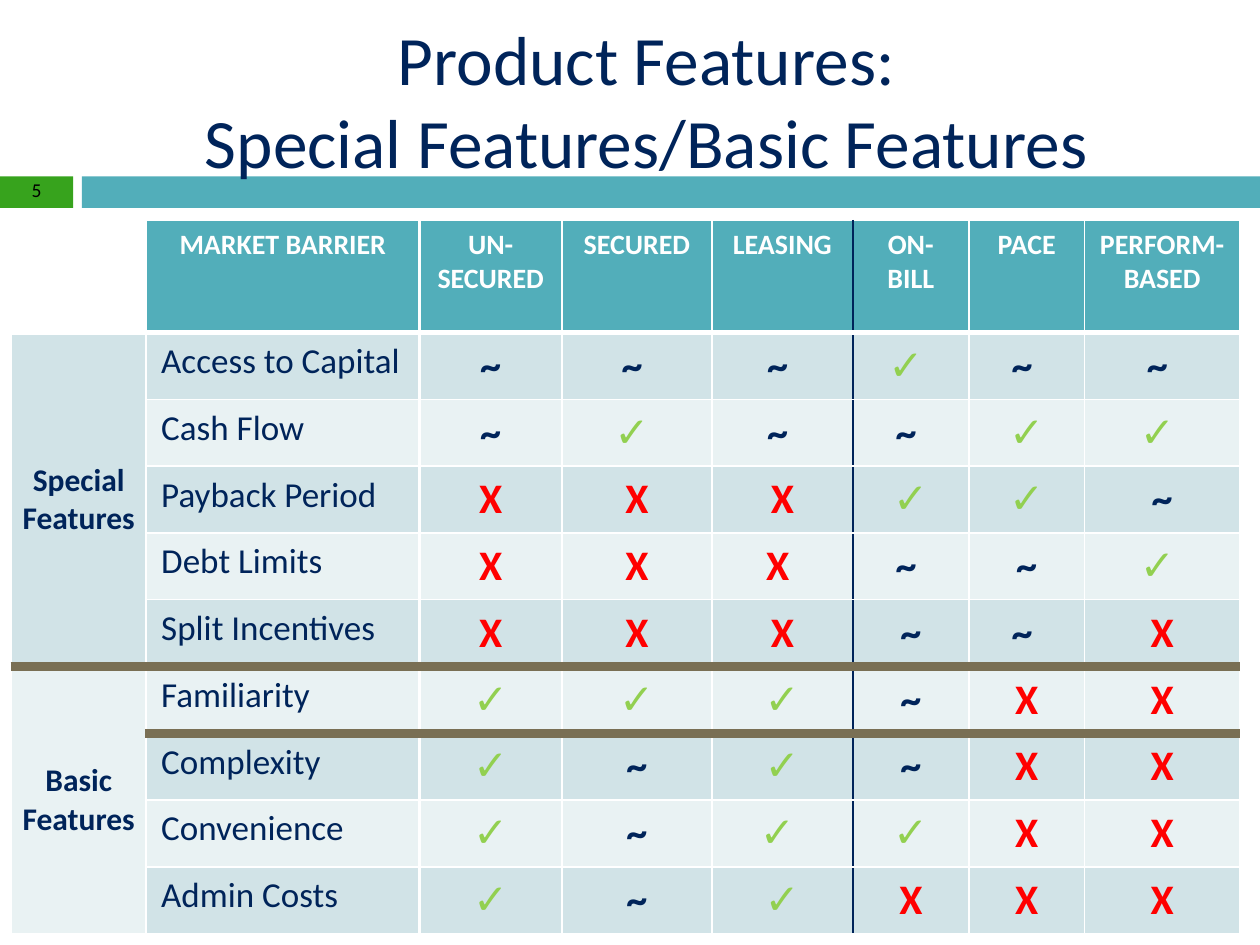
from lxml import etree
from pptx import Presentation
from pptx.dml.color import RGBColor
from pptx.enum import shapes, text
from pptx.oxml import ns
from pptx.util import Inches, Pt

NAVY, TEAL, GREEN, BROWN = "00245A", "52AEBA", "37A31D", "796F54"
WHITE, DARK, LIGHT = "FFFFFF", "D1E3E7", "E9F2F3"
INK = {"~": NAVY, "✓": "92D050", "X": "FF0000"}

TITLE = ["Product Features:", "Special Features/Basic Features"]
BARS = [(0, 0.58, GREEN), (0.65, 9.35, TEAL)]
HEAD = ["MARKET BARRIER", "UN-SECURED", "SECURED", "LEASING",
        "ON-BILL", "PACE", "PERFORM-BASED"]
# A space after a mark nudges it left of centre.
ROWS = [
    ("Access to Capital", ["~", "~ ", "~ ", "✓ ", "~ ", "~ "]),
    ("Cash Flow", ["~", "✓ ", "~ ", "~ ", "✓", "✓ "]),
    ("Payback Period", ["X", "X", "X", "✓", "✓", "~"]),
    ("Debt Limits", ["X", "X", "X ", "~ ", "~", "✓ "]),
    ("Split Incentives", ["X", "X", "X", "~", "~ ", "X"]),
    ("Familiarity", ["✓", "✓", "✓", "~", "X", "X"]),
    ("Complexity", ["✓", "~", "✓", "~", "X", "X"]),
    ("Convenience", ["✓", "~", "✓ ", "✓", "X", "X"]),
    ("Admin Costs", ["✓", "~", "✓", "X", "X", "X"]),
]
GROUPS = [("Special Features", 1, 5), ("Basic Features", 6, 9)]
COLS = [1.07, 2.17, 1.13, 1.19, 1.12, 0.92, 0.92, 1.23]
HEAD_H, ROW_H = 0.89, 0.53
CENTER, LEFT = text.PP_ALIGN.CENTER, text.PP_ALIGN.LEFT
MIDDLE, TOP = text.MSO_ANCHOR.MIDDLE, text.MSO_ANCHOR.TOP


def rgb(code):
    return RGBColor.from_string(code)


def paint(item, code):
    item.fill.solid()
    item.fill.fore_color.rgb = rgb(code)


def write(para, words, size, code, bold=False, align=CENTER):
    para.alignment = align
    run = para.add_run()
    run.text = words
    font = run.font
    font.name, font.size, font.bold = "Calibri", Pt(size), bold
    font.color.rgb = rgb(code)


def place(shape, left, top, width, height):
    shape.left, shape.top = Inches(left), Inches(top)
    shape.width, shape.height = Inches(width), Inches(height)


def across(line, col):
    """Colour and width of the horizontal rule above row number `line`."""
    if line == 6 or (line == 7 and col > 0):
        return BROWN, 6
    return WHITE, 3 if line == 1 else 1


def down(line):
    """Colour and width of the vertical rule left of column number `line`."""
    return {2: (WHITE, 2.25), 5: (NAVY, 1)}.get(line, (WHITE, 1))


def edge(cell, row, col, last):
    """Set the four borders of a cell that reaches down to row `last`."""
    props = cell._tc.get_or_add_tcPr()
    sides = {"lnL": down(col), "lnR": down(col + 1),
             "lnT": across(row, col), "lnB": across(last + 1, col)}
    for tag, (code, width) in sides.items():
        line = etree.SubElement(props, ns.qn("a:" + tag), w=str(Pt(width)))
        fill = etree.SubElement(line, ns.qn("a:solidFill"))
        etree.SubElement(fill, ns.qn("a:srgbClr"), val=code)


def dress(cell, row, col, last, fill):
    edge(cell, row, col, last)
    paint(cell, fill)
    cell.margin_left = cell.margin_right = Inches(0.12 if col else 0.05)
    cell.margin_top = cell.margin_bottom = Inches(0.06)
    cell.vertical_anchor = MIDDLE if row and col != 1 else TOP


def add_grid(slide):
    high = HEAD_H + ROW_H * len(ROWS)
    table = slide.shapes.add_table(
        len(ROWS) + 1, len(COLS), Inches(0.09), Inches(1.75),
        Inches(sum(COLS)), Inches(high)).table
    table.first_row = table.horz_banding = False
    for column, width in zip(table.columns, COLS):
        column.width = Inches(width)
    for i, row in enumerate(table.rows):
        row.height = Inches(ROW_H if i else HEAD_H)

    dress(table.cell(0, 0), 0, 0, 0, WHITE)
    for col, name in enumerate(HEAD, 1):
        cell = table.cell(0, col)
        dress(cell, 0, col, 0, TEAL)
        write(cell.text_frame.paragraphs[0], name, 16, WHITE, True)

    for row, (name, marks) in enumerate(ROWS, 1):
        for col, words in enumerate([name] + marks, 1):
            cell = table.cell(row, col)
            dress(cell, row, col, row, DARK if row % 2 else LIGHT)
            para = cell.text_frame.paragraphs[0]
            if col == 1:
                write(para, words, 20, NAVY, align=LEFT)
            else:
                write(para, words, 24, INK[words[0]], True)

    for name, first, last in GROUPS:
        cell = table.cell(first, 0)
        cell.merge(table.cell(last, 0))
        dress(cell, first, 0, last, DARK if first % 2 else LIGHT)
        write(cell.text_frame.paragraphs[0], name, 18, NAVY, True)


def main():
    deck = Presentation()
    deck.slide_width, deck.slide_height = Inches(10), Inches(7.5)
    slide = deck.slides.add_slide(deck.slide_layouts[5])

    for left, width, code in BARS:
        bar = slide.shapes.add_shape(
            shapes.MSO_SHAPE.RECTANGLE, Inches(left), Inches(1.4),
            Inches(width), Inches(0.25))
        bar.shadow.inherit = False
        paint(bar, code)
        bar.line.fill.background()

    title = slide.shapes.title
    place(title, 0.67, 0.25, 8.92, 1.08)
    frame = title.text_frame
    frame.word_wrap, frame.vertical_anchor = True, MIDDLE
    frame.auto_size = text.MSO_AUTO_SIZE.NONE
    para = frame.paragraphs[0]
    for i, words in enumerate(TITLE):
        if i:
            para.add_line_break()
        write(para, words, 39.6, NAVY)
    # The title's descenders lie over the teal bar.
    slide.shapes._spTree.append(title._element)

    number = slide.shapes.add_textbox(0, Inches(1.39), Inches(0.58), Inches(0.27))
    frame = number.text_frame
    frame.word_wrap, frame.vertical_anchor = True, MIDDLE
    para = frame.paragraphs[0]
    para.line_spacing = 0.8
    write(para, "5", 11.2, "000000")

    add_grid(slide)
    deck.save("out.pptx")


if __name__ == "__main__":
    main()
